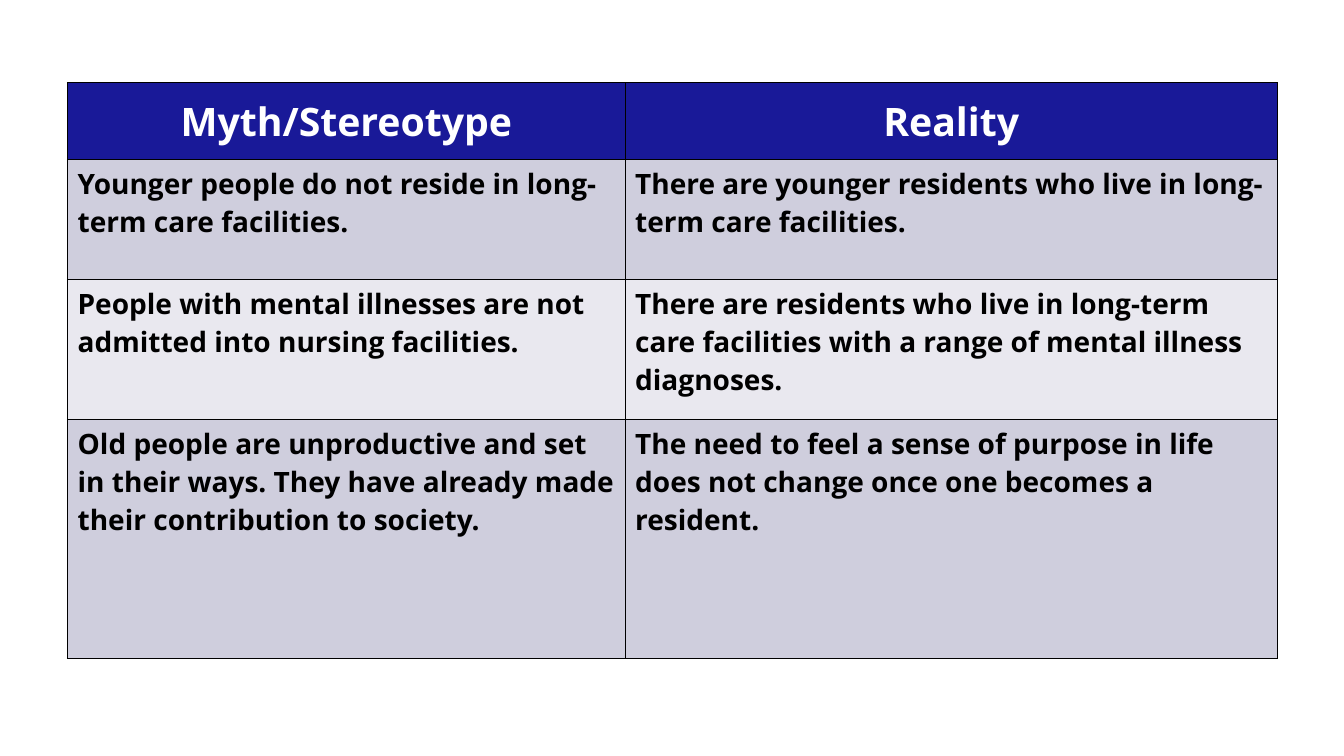
from pptx import Presentation
from pptx.dml.color import RGBColor
from pptx.enum import text
from pptx.oxml import parse_xml
from pptx.oxml.ns import nsdecls
from pptx.util import Inches, Pt

COLORS = {
    "header": "191998",
    "odd_row": "CFCEDD",
    "even_row": "E9E8EF",
    "header_text": "FFFFFF",
    "body_text": "000000",
    "border": "000000",
}
FONT = "Open Sans"
COLUMN_WIDTHS = (5.53, 6.47)
ROW_HEIGHTS = (0.76, 1.19, 1.39, 2.37)
ROWS = (
    ("Myth/Stereotype", "Reality"),
    ("Younger people do not reside in long-term care facilities.",
     "There are younger residents who live in long-term care facilities."),
    ("People with mental illnesses are not admitted into nursing facilities.",
     "There are residents who live in long-term care facilities with a range "
     "of mental illness diagnoses."),
    ("Old people are unproductive and set in their ways. They have already "
     "made their contribution to society.",
     "The need to feel a sense of purpose in life does not change once one "
     "becomes a resident."),
)


def add_borders(cell):
    """Draw a thin line on all four sides; must come before the cell fill."""
    properties = cell._tc.get_or_add_tcPr()
    for side in ("lnL", "lnR", "lnT", "lnB"):
        properties.append(parse_xml(
            f'<a:{side} {nsdecls("a")} w="{Pt(1)}"><a:solidFill>'
            f'<a:srgbClr val="{COLORS["border"]}"/></a:solidFill></a:{side}>'))


def fill_cell(cell, wording, fill, color, size):
    add_borders(cell)
    cell.fill.solid()
    cell.fill.fore_color.rgb = RGBColor.from_string(COLORS[fill])
    span = cell.text_frame.paragraphs[0].add_run()
    span.text = wording
    span.font.name = FONT
    span.font.size = Pt(size)
    span.font.bold = True
    span.font.color.rgb = RGBColor.from_string(COLORS[color])


def add_myth_table(page, left, top, width, height):
    table = page.shapes.add_table(
        len(ROWS), len(COLUMN_WIDTHS),
        Inches(left), Inches(top), Inches(width), Inches(height)).table
    for column, column_width in zip(table.columns, COLUMN_WIDTHS):
        column.width = Inches(column_width)
    for index, (row, row_height) in enumerate(zip(table.rows, ROW_HEIGHTS)):
        row.height = Inches(row_height)
        for cell, wording in zip(row.cells, ROWS[index]):
            if index == 0:
                fill_cell(cell, wording, "header", "header_text", 28)
                cell.vertical_anchor = text.MSO_ANCHOR.MIDDLE
                cell.text_frame.paragraphs[0].alignment = text.PP_ALIGN.CENTER
            else:
                fill = "odd_row" if index % 2 else "even_row"
                fill_cell(cell, wording, fill, "body_text", 20)


def main():
    deck = Presentation()
    deck.slide_width = Inches(13.33)
    deck.slide_height = Inches(7.5)
    page = deck.slides.add_slide(deck.slide_layouts[6])
    add_myth_table(page, 0.67, 0.82, sum(COLUMN_WIDTHS), sum(ROW_HEIGHTS))
    deck.save("out.pptx")


if __name__ == "__main__":
    main()
